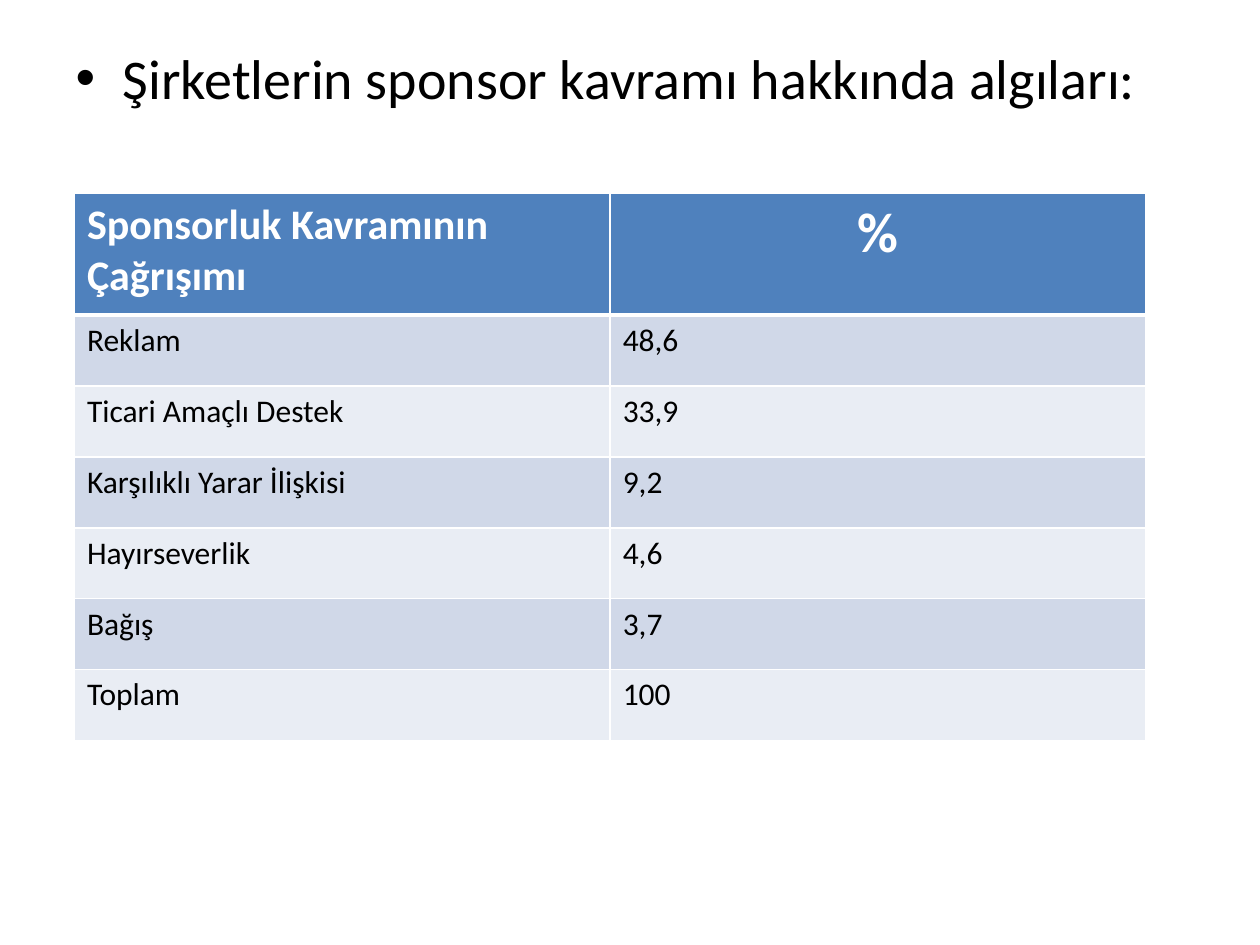
from lxml import etree
from pptx import Presentation
from pptx.dml.color import RGBColor
from pptx.enum import text
from pptx.oxml import ns
from pptx.util import Cm, Pt

FONT = "Calibri"
WHITE, BLACK, HEADER = "FFFFFF", "000000", "4F81BD"
BANDS = ("D0D8E8", "E9EDF4")
HEADINGS = ("Sponsorluk Kavramının Çağrışımı", "%")
ASSOCIATIONS = (
    ("Reklam", "48,6"),
    ("Ticari Amaçlı Destek", "33,9"),
    ("Karşılıklı Yarar İlişkisi", "9,2"),
    ("Hayırseverlik", "4,6"),
    ("Bağış", "3,7"),
    ("Toplam", "100"),
)


def color(value):
    return RGBColor.from_string(value)


def write(paragraph, wording, size, ink, bold=False):
    paragraph.text = wording
    font = paragraph.font
    font.name, font.size, font.bold = FONT, Pt(size), bold
    font.color.rgb = color(ink)


def add_borders(cell, bottom):
    properties = cell._tc.get_or_add_tcPr()
    for side, width in (("L", 1), ("R", 1), ("T", 1), ("B", bottom)):
        border = etree.SubElement(properties, ns.qn(f"a:ln{side}"), w=str(Pt(width)))
        fill = etree.SubElement(border, ns.qn("a:solidFill"))
        etree.SubElement(fill, ns.qn("a:srgbClr"), val=WHITE)


def fill_cell(cell, wording, size, ink, background, bold=False, bottom=1):
    add_borders(cell, bottom)
    cell.fill.solid()
    cell.fill.fore_color.rgb = color(background)
    write(cell.text_frame.paragraphs[0], wording, size, ink, bold)


def add_statement(slide, wording):
    statement = slide.placeholders[1]
    statement.left, statement.top = Cm(1.27), Cm(0.74)
    statement.width, statement.height = Cm(22.86), Cm(17)
    write(statement.text_frame.paragraphs[0], wording, 32, BLACK)


def add_perception_table(slide):
    header_height, row_height = Cm(2.46), Cm(1.43)
    height = header_height + row_height * len(ASSOCIATIONS)
    table = slide.shapes.add_table(
        len(ASSOCIATIONS) + 1, len(HEADINGS), Cm(1.5), Cm(3.89), Cm(21.6), height
    ).table
    for row in table.rows:
        row.height = row_height
    table.rows[0].height = header_height

    for column, (heading, size) in enumerate(zip(HEADINGS, (24, 32))):
        fill_cell(table.cell(0, column), heading, size, WHITE, HEADER, True, 3)
    table.cell(0, 1).text_frame.paragraphs[0].alignment = text.PP_ALIGN.CENTER

    for index, association in enumerate(ASSOCIATIONS):
        for column, wording in enumerate(association):
            cell = table.cell(index + 1, column)
            fill_cell(cell, wording, 18, BLACK, BANDS[index % 2])


def main():
    presentation = Presentation()
    presentation.slide_width, presentation.slide_height = Cm(25.4), Cm(19.05)
    slide = presentation.slides.add_slide(presentation.slide_layouts[1])
    title = slide.shapes.title.element
    title.getparent().remove(title)
    add_statement(slide, "Şirketlerin sponsor kavramı hakkında algıları:")
    add_perception_table(slide)
    presentation.save("out.pptx")


if __name__ == "__main__":
    main()
